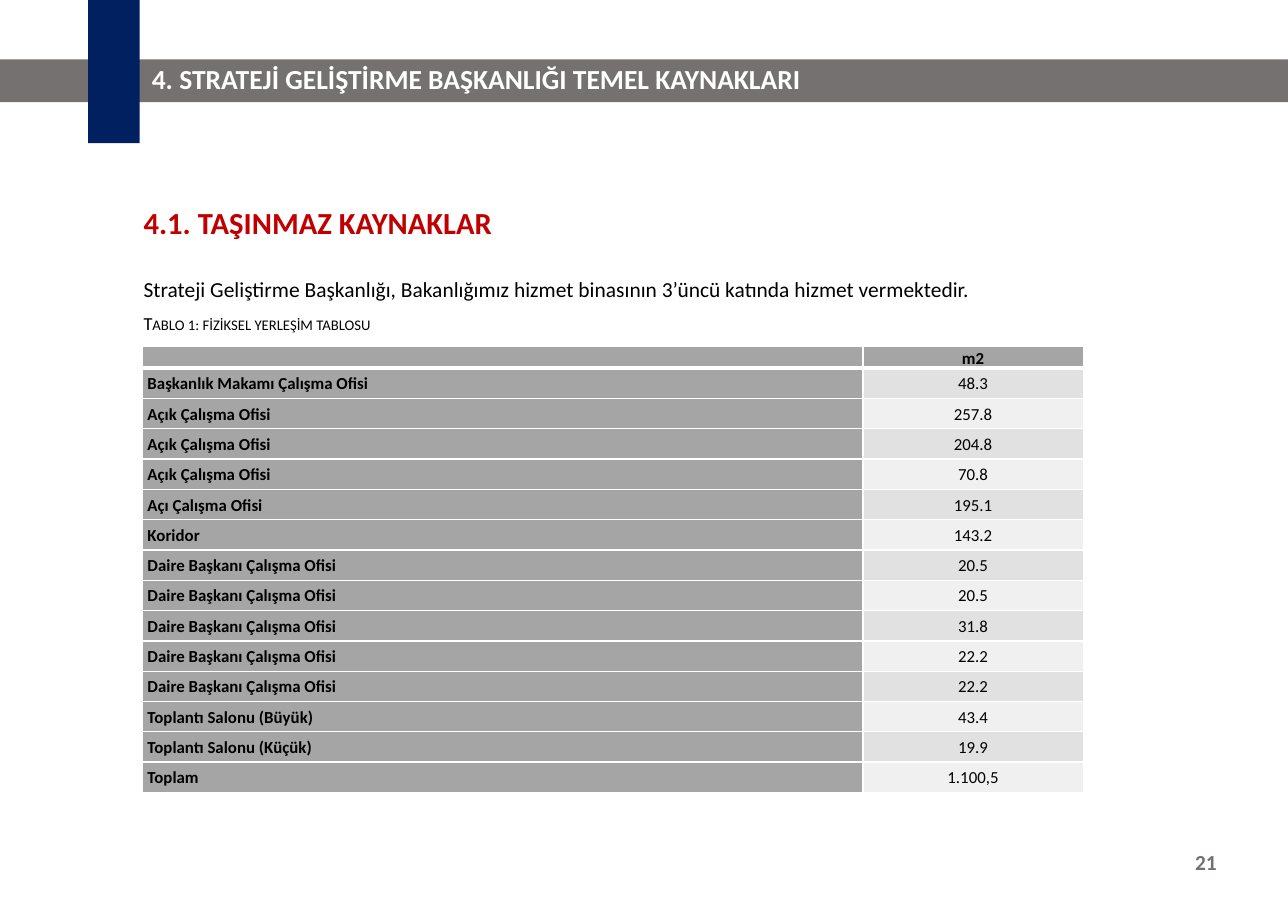
from lxml.etree import SubElement
from pptx import Presentation
from pptx.dml.color import RGBColor
from pptx.enum.lang import MSO_LANGUAGE_ID as Lang
from pptx.enum.shapes import MSO_SHAPE as Shape
from pptx.enum.text import MSO_ANCHOR as Anchor, PP_ALIGN as Align
from pptx.oxml.ns import qn
from pptx.util import Cm, Pt

FONT = "Calibri"
COLORS = {
    "bar": "767171", "navy": "002060", "red": "C00000",
    "black": "000000", "white": "FFFFFF",
    "header": "A5A5A5", "band_dark": "E1E1E1", "band_light": "F0F0F0",
}
PAGE_WIDTH, PAGE_HEIGHT = 29.69, 21.01
HEADER_HEIGHT, ROW_HEIGHT = 0.5, 0.7

ROOMS = [
    ("Başkanlık Makamı Çalışma Ofisi", "48.3"),
    ("Açık Çalışma Ofisi", "257.8"),
    ("Açık Çalışma Ofisi", "204.8"),
    ("Açık Çalışma Ofisi", "70.8"),
    ("Açı Çalışma Ofisi", "195.1"),
    ("Koridor", "143.2"),
    ("Daire Başkanı Çalışma Ofisi", "20.5"),
    ("Daire Başkanı Çalışma Ofisi", "20.5"),
    ("Daire Başkanı Çalışma Ofisi", "31.8"),
    ("Daire Başkanı Çalışma Ofisi", "22.2"),
    ("Daire Başkanı Çalışma Ofisi", "22.2"),
    ("Toplantı Salonu (Büyük)", "43.4"),
    ("Toplantı Salonu (Küçük)", "19.9"),
    ("Toplam", "1.100,5"),
]


def rgb(color):
    return RGBColor.from_string(COLORS[color])


def write(frame, text, size, color="black", bold=False, align=Align.LEFT, spacing=0.9):
    paragraph = frame.paragraphs[0]
    paragraph.text = text
    paragraph.alignment = align
    paragraph.line_spacing = spacing
    for run in paragraph.runs:
        font = run.font
        font.name, font.size, font.bold = FONT, Pt(size), bold
        font.color.rgb = rgb(color)
        font.language_id = Lang.TURKISH
    if not text:
        SubElement(paragraph._p, qn("a:endParaRPr"), sz=str(size * 100))
    return paragraph


def add_text(slide, box, text, size, anchor=Anchor.TOP, **style):
    frame = slide.shapes.add_textbox(*map(Cm, box)).text_frame
    frame.word_wrap = True
    frame.vertical_anchor = anchor
    return write(frame, text, size, **style)


def add_block(slide, box, color):
    block = slide.shapes.add_shape(Shape.RECTANGLE, *map(Cm, box))
    block.shadow.inherit = False
    block.fill.solid()
    block.fill.fore_color.rgb = rgb(color)
    block.line.fill.background()


def add_banner(slide, box, title):
    left, top, width, height = box
    add_block(slide, box, "bar")
    add_block(slide, (left + 2.03, 0, 1.19, 3.3), "navy")
    add_text(slide, (left + 3.25, top, width - 3.5, height), title, 18,
             anchor=Anchor.MIDDLE, color="white", bold=True)


def add_intro(slide, box, heading, sentence, caption):
    left, top, width, _ = box
    add_text(slide, (left, top, width, 1.4), heading, 20,
             anchor=Anchor.MIDDLE, color="red", bold=True)
    add_text(slide, (left, top + 1.83, width, 0.85), sentence, 14)
    label = add_text(slide, (left, top + 2.67, width, 0.69), caption, 12)
    label.runs[0].font._element.set("cap", "small")


def set_borders(cell, top, bottom):
    properties = cell._tc.get_or_add_tcPr()
    for side, points in (("L", 1), ("R", 1), ("T", top), ("B", bottom)):
        line = SubElement(properties, qn(f"a:ln{side}"), w=str(Pt(points)))
        fill = SubElement(line, qn("a:solidFill"))
        SubElement(fill, qn("a:srgbClr"), val=COLORS["white"])


def add_area_table(slide, box, rows):
    left, top, width, height = map(Cm, box)
    areas = slide.shapes.add_table(len(rows), 2, left, top, width, height).table
    areas.first_row = areas.horz_banding = False
    areas.columns[1].width = Cm(5.08)
    areas.columns[0].width = width - Cm(5.08)
    for r, row in enumerate(rows):
        areas.rows[r].height = Cm(ROW_HEIGHT if r else HEADER_HEIGHT)
        band = "band_dark" if r % 2 else "band_light"
        for c, text in enumerate(row):
            cell = areas.cell(r, c)
            is_header = r == 0 or c == 0
            cell.margin_left = cell.margin_right = Cm(0.12)
            cell.margin_top = cell.margin_bottom = 0
            cell.vertical_anchor = Anchor.MIDDLE
            set_borders(cell, top=3 if r == 1 else 1, bottom=3 if r == 0 else 1)
            cell.fill.solid()
            cell.fill.fore_color.rgb = rgb("header" if is_header else band)
            write(cell.text_frame, text, 11, bold=is_header, spacing=1.07,
                  align=Align.CENTER if c else Align.LEFT)


def add_page_number(slide, box, number):
    add_text(slide, box, number, 14, color="bar", bold=True,
             align=Align.RIGHT, spacing=1.0)


def main():
    deck = Presentation()
    deck.slide_width, deck.slide_height = Cm(PAGE_WIDTH), Cm(PAGE_HEIGHT)
    slide = deck.slides.add_slide(deck.slide_layouts[6])

    # Chapter banner
    add_banner(slide, (0, 1.37, PAGE_WIDTH, 0.99),
               "4. STRATEJİ GELİŞTİRME BAŞKANLIĞI TEMEL KAYNAKLARI")

    # Section heading, sentence and table caption
    add_intro(slide, (3.06, 4.47, 25.25, 3.36), "4.1. TAŞINMAZ KAYNAKLAR",
              "Strateji Geliştirme Başkanlığı, Bakanlığımız hizmet binasının "
              "3’üncü katında hizmet vermektedir.",
              "Tablo 1: fiziksel yerleşim tablosu")

    # Floor areas
    table_height = HEADER_HEIGHT + ROW_HEIGHT * len(ROOMS)
    add_area_table(slide, (3.28, 7.99, 21.69, table_height), [("", "m2")] + ROOMS)

    # Page number
    add_page_number(slide, (21.62, 19.46, 6.68, 1.12), "21")

    deck.save("out.pptx")


if __name__ == "__main__":
    main()
